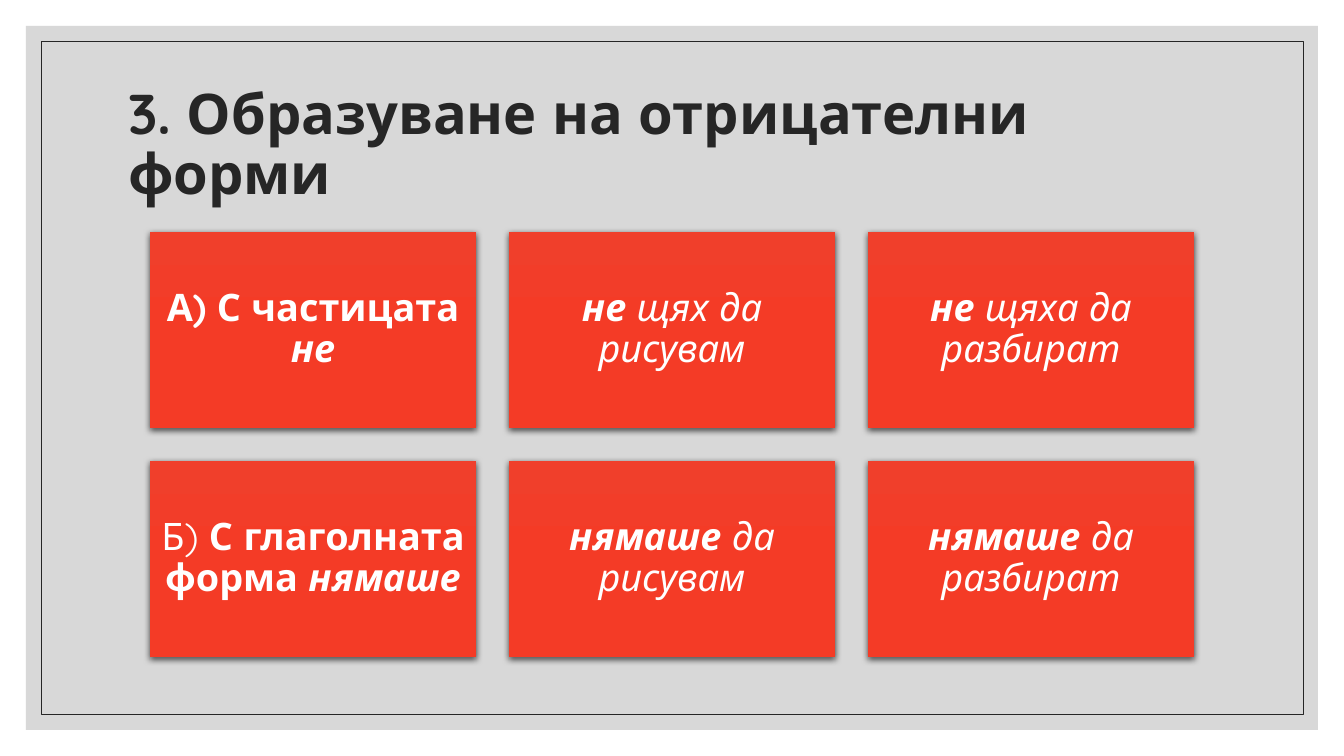
from copy import deepcopy

from lxml import etree
from pptx import Presentation
from pptx.dml.color import RGBColor
from pptx.enum.shapes import MSO_SHAPE
from pptx.enum.text import MSO_ANCHOR, MSO_AUTO_SIZE, PP_ALIGN
from pptx.oxml.ns import qn
from pptx.util import Emu, Pt

RECTANGLE = MSO_SHAPE.RECTANGLE
MIDDLE = MSO_ANCHOR.MIDDLE
NO_AUTOFIT = MSO_AUTO_SIZE.NONE
LEFT, CENTER = PP_ALIGN.LEFT, PP_ALIGN.CENTER

SLIDE_W, SLIDE_H = 1344, 756
EMU_PER_PX = 12192000 / SLIDE_W
TITLE_ONLY = 5

# Each card is a list of (text, bold, italic)
CARD_ROWS = [
    [
        [("А) С частицата ", True, False), ("не", True, True)],
        [("не", True, True), (" щях да рисувам", False, True)],
        [("не", True, True), (" щяха да разбират", False, True)],
    ],
    [
        [("Б) ", False, False), ("С глаголната форма ", True, False),
         ("нямаше", True, True)],
        [("нямаше", True, True), (" да рисувам", False, True)],
        [("нямаше", True, True), (" да разбират", False, True)],
    ],
]


def px(length):
    return Emu(round(length * EMU_PER_PX))


def rgb(color):
    return RGBColor.from_string(color)


def set_alpha(color_element, percent):
    etree.SubElement(color_element, qn("a:alpha"), val=str(percent * 1000))


class SlideBuilder:
    font = "Quicksand"
    ink, panel_gray, white = "262626", "BFBFBF", "FFFFFF"
    card_reds = ("F03F2B", "F43B26", "F33B26")

    def __init__(self, slide):
        self.slide = slide

    def rectangle(self, left, top, width, height):
        box = self.slide.shapes.add_shape(
            RECTANGLE, px(left), px(top), px(width), px(height))
        box.shadow.inherit = False
        box.fill.background()
        box.line.fill.background()
        return box

    def panel(self, left, top, width, height):
        panel = self.rectangle(left, top, width, height)
        panel.fill.solid()
        panel.fill.fore_color.rgb = rgb(self.panel_gray)
        set_alpha(panel.element.spPr.find(".//" + qn("a:srgbClr")), 60)

    def frame(self, left, top, width, height):
        frame = self.rectangle(left, top, width, height)
        frame.line.color.rgb = rgb(self.ink)
        frame.line.width = Pt(0.5)

    def set_text(self, frame, pieces, size, color, align):
        frame.word_wrap = True
        frame.auto_size = NO_AUTOFIT
        frame.vertical_anchor = MIDDLE
        paragraph = frame.paragraphs[0]
        paragraph.alignment = align
        paragraph.line_spacing = 0.9
        for text, bold, italic in pieces:
            run = paragraph.add_run()
            run.text = text
            run.font.name = self.font
            run.font.size = Pt(size)
            run.font.bold = bold
            run.font.italic = italic
            run.font.color.rgb = rgb(color)

    def title(self, text, left, top, width, height):
        title = self.slide.shapes.title
        title.left, title.top = px(left), px(top)
        title.width, title.height = px(width), px(height)
        self.set_text(title.text_frame, [(text, True, False)],
                      40, self.ink, LEFT)
        # Bring the title in front of the panel
        self.slide.shapes.element.append(title.element)

    def card(self, pieces, left, top, width, height):
        card = self.rectangle(left, top, width, height)
        self.red_gradient(card)
        self.soft_shadow(card)
        frame = card.text_frame
        frame.margin_left = frame.margin_right = px(11)
        frame.margin_top = frame.margin_bottom = px(11)
        self.set_text(frame, pieces, 27, self.white, CENTER)

    def red_gradient(self, card):
        card.fill.gradient()
        card.fill.gradient_angle = 270
        first, last = card.fill.gradient_stops
        first.position, last.position = 0, 1
        first.color.rgb = rgb(self.card_reds[0])
        last.color.rgb = rgb(self.card_reds[2])
        # A third stop halfway down
        start = card.element.spPr.find(".//" + qn("a:gs"))
        middle = deepcopy(start)
        middle.set("pos", "50000")
        middle.find(qn("a:srgbClr")).set("val", self.card_reds[1])
        start.addnext(middle)

    def soft_shadow(self, card):
        effects = card.element.spPr.find(qn("a:effectLst"))
        shadow = etree.SubElement(
            effects, qn("a:outerShdw"), blurRad=str(Pt(4.5)),
            dist=str(Pt(1.5)), dir="5400000", algn="ctr", rotWithShape="0")
        black = etree.SubElement(shadow, qn("a:srgbClr"), val="000000")
        set_alpha(black, 63)


def main():
    deck = Presentation()
    deck.slide_width, deck.slide_height = px(SLIDE_W), px(SLIDE_H)
    builder = SlideBuilder(
        deck.slides.add_slide(deck.slide_layouts[TITLE_ONLY]))

    # Backdrop
    builder.panel(26, 26, 1292, 704)
    builder.frame(41, 41, 1262, 673)

    # Heading
    builder.title("3. Образуване на отрицателни форми", 118, 71, 1109, 151)

    # Grid of negative forms
    card_w, card_h, gap = 326, 196, 33
    for row, cards in enumerate(CARD_ROWS):
        for column, pieces in enumerate(cards):
            builder.card(pieces, 150 + column * (card_w + gap),
                         232 + row * (card_h + gap), card_w, card_h)

    deck.save("out.pptx")


if __name__ == "__main__":
    main()
